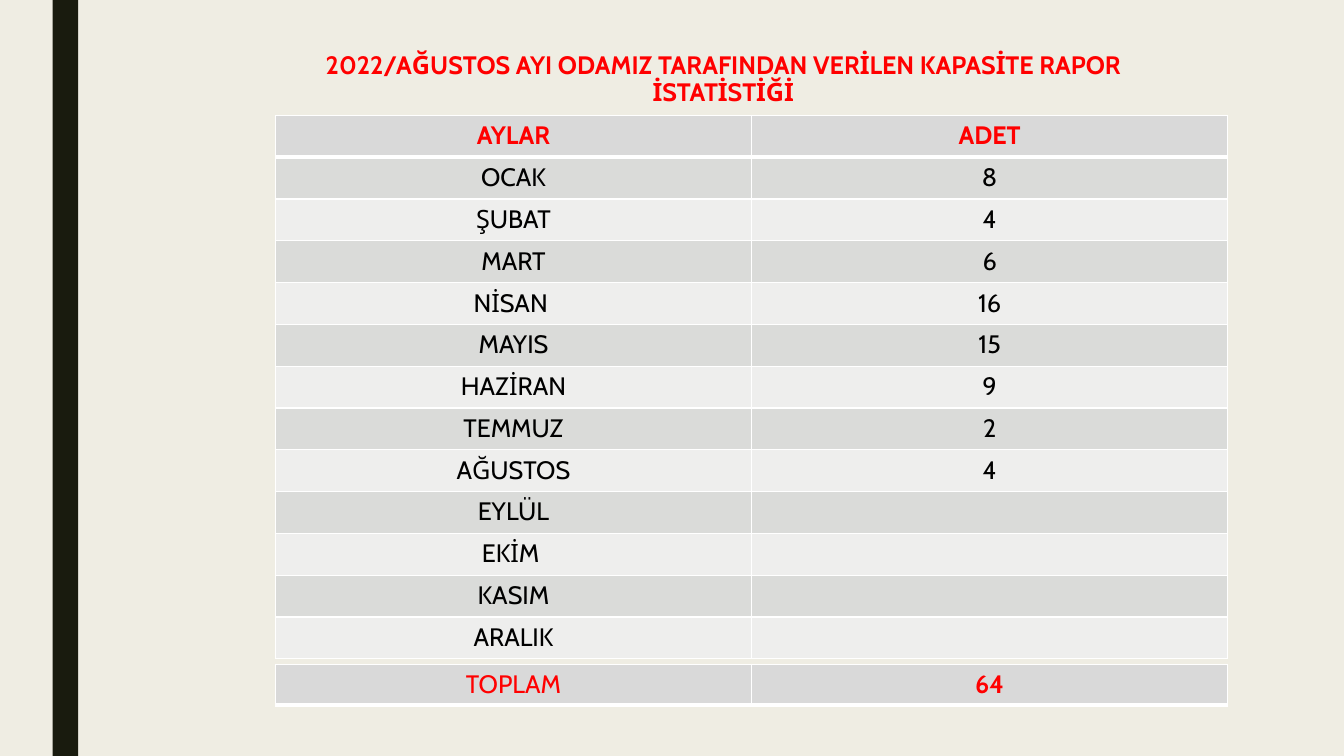
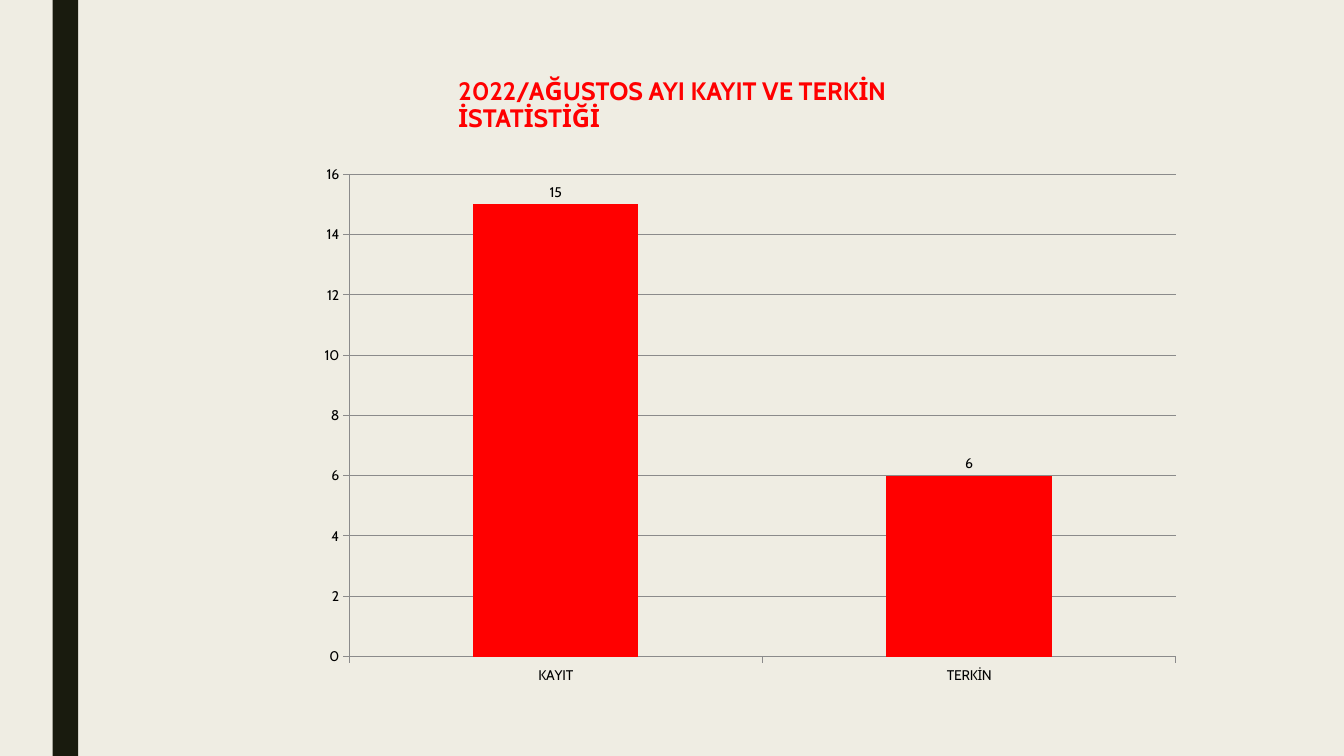
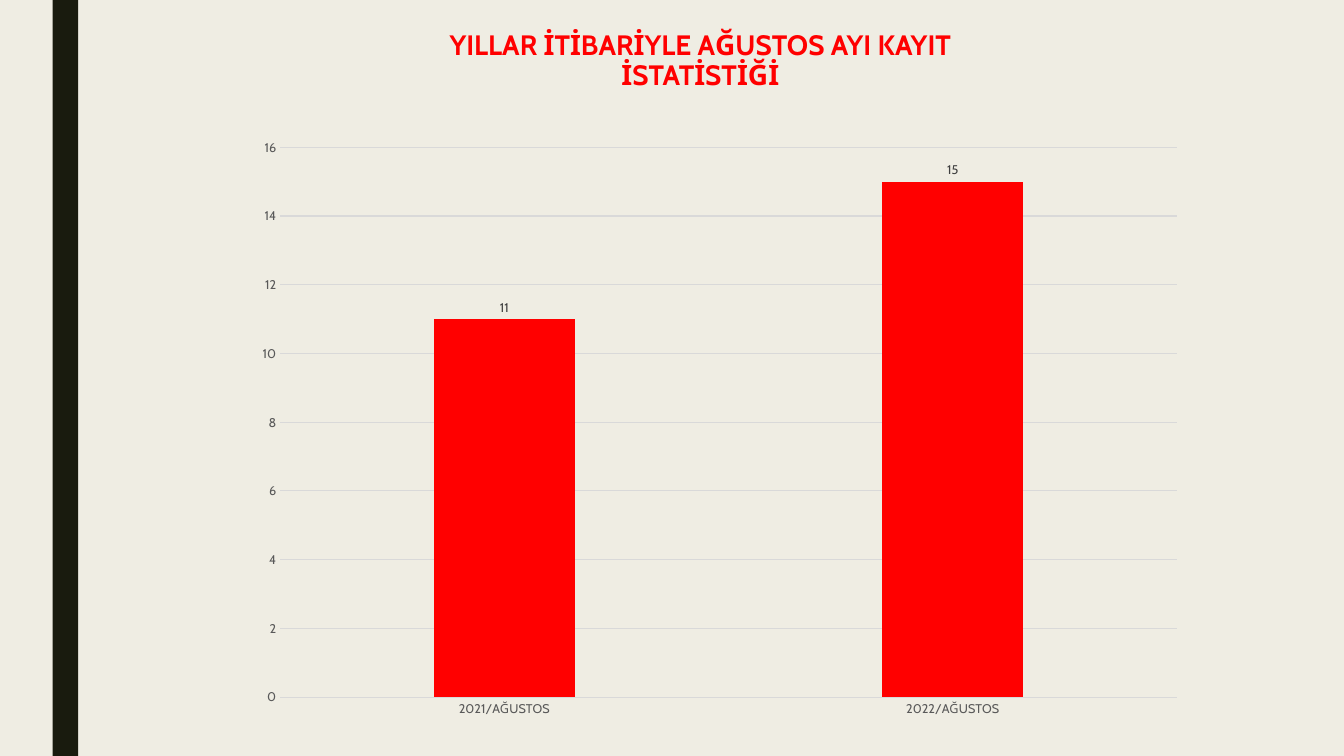
from lxml import etree
from pptx import Presentation
from pptx import util as u
from pptx.chart import data as chart_data
from pptx.dml import color
from pptx.enum import chart as charts, shapes, text
from pptx.oxml import ns

COLOURS = {
    "paper": "EFEDE3", "band": "191B0E", "red": "FF0000", "black": "000000",
    "white": "FFFFFF", "heading": "D9D9D9", "odd": "DADBD9", "even": "EEEEED",
    "axis": "8B8B8B", "pale": "D9D9D9", "axis_text": "595959", "label": "404040",
}
FONT = "Cabin"
WIDTH, HEIGHT = u.Cm(33.87), u.Cm(19.05)
TITLE_ONLY = 5
CENTER = text.PP_ALIGN.CENTER

STRONG_CHART = {
    "gap": 150, "overlap": 0, "size": 10, "axis_text": "black", "label": "black",
    "line": "axis", "tick": charts.XL_TICK_MARK.OUTSIDE, "value_line": True,
}
PALE_CHART = {
    "gap": 219, "overlap": -27, "size": 9, "axis_text": "axis_text", "label": "label",
    "line": "pale", "tick": charts.XL_TICK_MARK.NONE, "value_line": False,
}


def rgb(name):
    return color.RGBColor.from_string(COLOURS[name])


class Deck:
    def __init__(self):
        self.presentation = Presentation()
        self.presentation.slide_width = WIDTH
        self.presentation.slide_height = HEIGHT
        self.fill(self.presentation.slide_master.background, "paper")
        self.slide = None

    def fill(self, target, name):
        target.fill.solid()
        target.fill.fore_color.rgb = rgb(name)

    def font(self, font, size, name, bold=False):
        values = {"name": FONT, "size": u.Pt(size), "bold": bold}
        for key, value in values.items():
            setattr(font, key, value)
        font.color.rgb = rgb(name)

    def line(self, line, name):
        line.color.rgb = rgb(name)
        line.width = u.Pt(0.75)

    def add_slide(self):
        layout = self.presentation.slide_layouts[TITLE_ONLY]
        self.slide = self.presentation.slides.add_slide(layout)
        self.side_band()

    def side_band(self):
        band = self.slide.shapes.add_shape(
            shapes.MSO_SHAPE.RECTANGLE, u.Cm(1.33), 0, u.Cm(0.64), HEIGHT)
        band.shadow.inherit = False
        band.line.fill.background()
        self.fill(band, "band")

    def title(self, words, box, size=18, align=CENTER):
        title = self.slide.shapes.title
        for key, value in zip(("left", "top", "width", "height"), box):
            setattr(title, key, u.Cm(value))
        frame = title.text_frame
        frame.text = words
        frame.word_wrap = True
        frame.auto_size = text.MSO_AUTO_SIZE.NONE
        frame.vertical_anchor = text.MSO_ANCHOR.TOP
        paragraph = frame.paragraphs[0]
        paragraph.alignment = align
        paragraph.line_spacing = 0.89
        self.font(paragraph.runs[0].font, size, "red", True)

    def borders(self, cell, widths):
        properties = cell._tc.get_or_add_tcPr()
        for side, points in widths.items():
            line = etree.SubElement(properties, ns.qn("a:ln" + side), w=str(u.Pt(points)))
            solid = etree.SubElement(line, ns.qn("a:solidFill"))
            etree.SubElement(solid, ns.qn("a:srgbClr"), val=COLOURS["white"])

    def cell(self, cell, words, fill, ink, bold, widths):
        self.borders(cell, widths)
        self.fill(cell, fill)
        paragraph = cell.text_frame.paragraphs[0]
        paragraph.alignment = CENTER
        if words:
            run = paragraph.add_run()
            run.text = words
            self.font(run.font, 18, ink, bold)

    def table(self, rows, box, style):
        """Fill a table; style(row, column) gives fill, ink, bold and bottom line width."""
        columns = len(rows[0])
        frame = self.slide.shapes.add_table(len(rows), columns, *map(u.Cm, box))
        table = frame.table
        for row_index, row in enumerate(rows):
            table.rows[row_index].height = u.Cm(box[3] / len(rows))
            for column_index, words in enumerate(row):
                fill, ink, bold, bottom = style(row_index, column_index)
                widths = {"L": 1, "R": 1, "T": 1, "B": bottom}
                if row_index:
                    del widths["T"]
                self.cell(table.cell(row_index, column_index), words,
                          fill, ink, bold, widths)

    def column_chart(self, values, box, style):
        data = chart_data.CategoryChartData()
        data.categories = list(values)
        data.add_series("Series 1", list(values.values()))
        chart = self.slide.shapes.add_chart(
            charts.XL_CHART_TYPE.COLUMN_CLUSTERED, *map(u.Cm, box), data).chart
        chart.has_legend = False
        chart.has_title = False
        self.font(chart.font, style["size"], "black")

        plot = chart.plots[0]
        plot.vary_by_categories = False
        plot.gap_width = style["gap"]
        plot.overlap = style["overlap"]
        self.fill(plot.series[0].format, "red")
        plot.has_data_labels = True
        labels = plot.data_labels
        labels.show_value = True
        labels.position = charts.XL_LABEL_POSITION.OUTSIDE_END
        self.font(labels.font, style["size"], style["label"])

        for axis in (chart.category_axis, chart.value_axis):
            axis.major_tick_mark = style["tick"]
            axis.minor_tick_mark = charts.XL_TICK_MARK.NONE
            self.font(axis.tick_labels.font, style["size"], style["axis_text"])
            self.line(axis.format.line, style["line"])
        axis = chart.value_axis
        for key, value in {"minimum_scale": 0, "maximum_scale": 16, "major_unit": 2}.items():
            setattr(axis, key, value)
        axis.has_major_gridlines = True
        self.line(axis.major_gridlines.format.line, style["line"])
        if not style["value_line"]:
            axis.format.line.fill.background()


def month_style(row, column):
    if row == 0:
        return "heading", "red", True, 3
    return ("odd" if row % 2 else "even"), "black", False, 1


def total_style(row, column):
    return "heading", "red", column == 1, 3


def main():
    deck = Deck()

    deck.add_slide()
    deck.title("2022/AĞUSTOS AYI ODAMIZ TARAFINDAN VERİLEN KAPASİTE RAPOR İSTATİSTİĞİ",
               (6.94, 1.21, 22.58, 1.32))
    months = [
        ("AYLAR", "ADET"), ("OCAK", "8"), ("ŞUBAT", "4"), ("MART", "6"),
        ("NİSAN ", "16"), ("MAYIS", "15"), ("HAZİRAN", "9"), ("TEMMUZ", "2"),
        ("AĞUSTOS", "4"), ("EYLÜL", ""), ("EKİM ", ""), ("KASIM", ""), ("ARALIK", ""),
    ]
    deck.table(months, (6.94, 2.91, 24, 13.7), month_style)
    deck.table([("TOPLAM", "64")], (6.94, 16.74, 24, 1.02), total_style)

    deck.add_slide()
    deck.title("2022/AĞUSTOS AYI KAYIT VE TERKİN İSTATİSTİĞİ",
               (11.3, 1.86, 14.68, 1.32), align=text.PP_ALIGN.LEFT)
    deck.column_chart({"KAYIT": 15, "TERKİN": 6}, (7.73, 3.91, 22.35, 13.58), STRONG_CHART)

    deck.add_slide()
    deck.title("YILLAR İTİBARİYLE AĞUSTOS AYI KAYIT İSTATİSTİĞİ",
               (9.55, 0.67, 16.2, 1.02), size=20)
    deck.column_chart({"2021/AĞUSTOS": 11, "2022/AĞUSTOS": 15},
                      (6.14, 3.21, 24, 15.16), PALE_CHART)

    deck.presentation.save("out.pptx")


if __name__ == "__main__":
    main()
